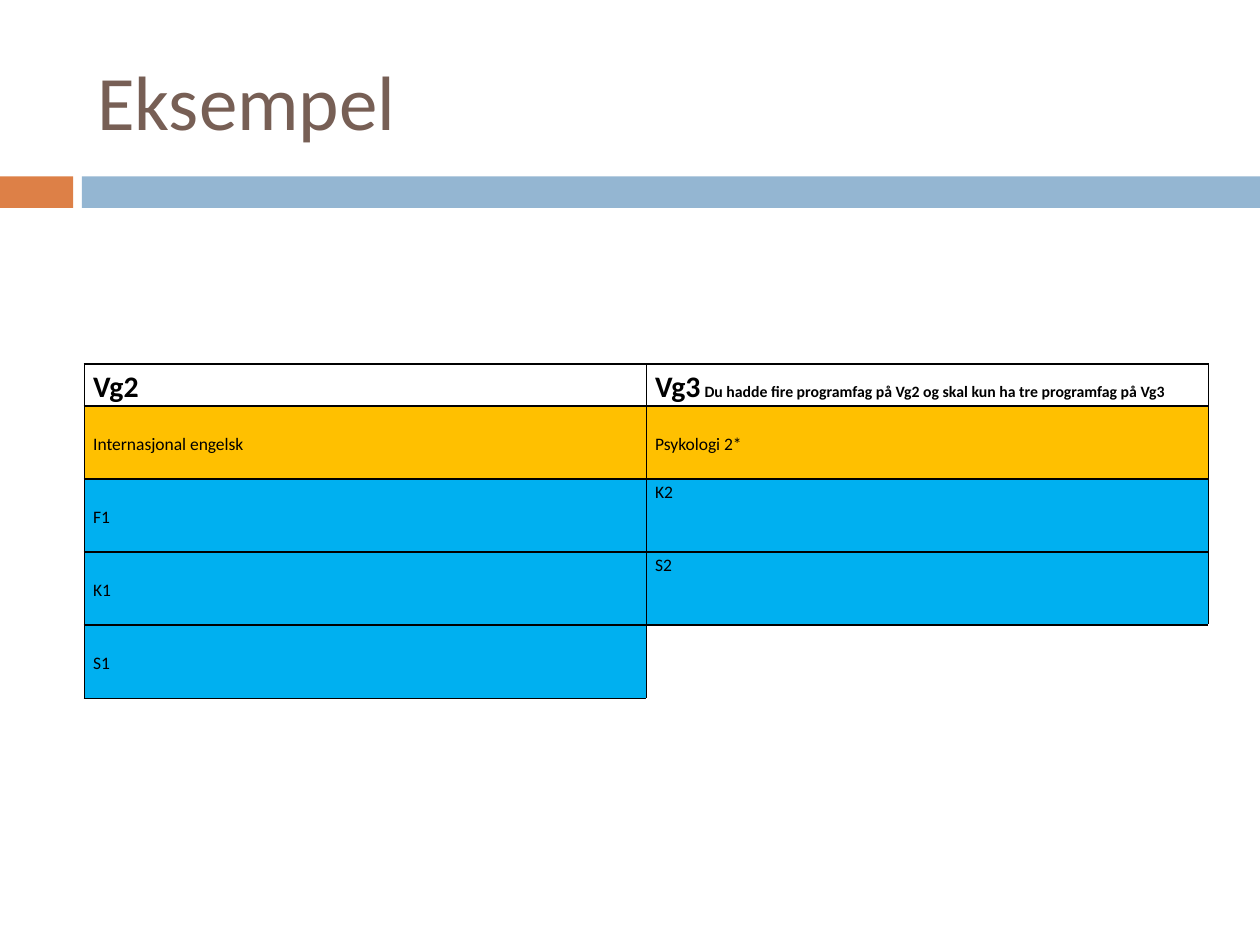
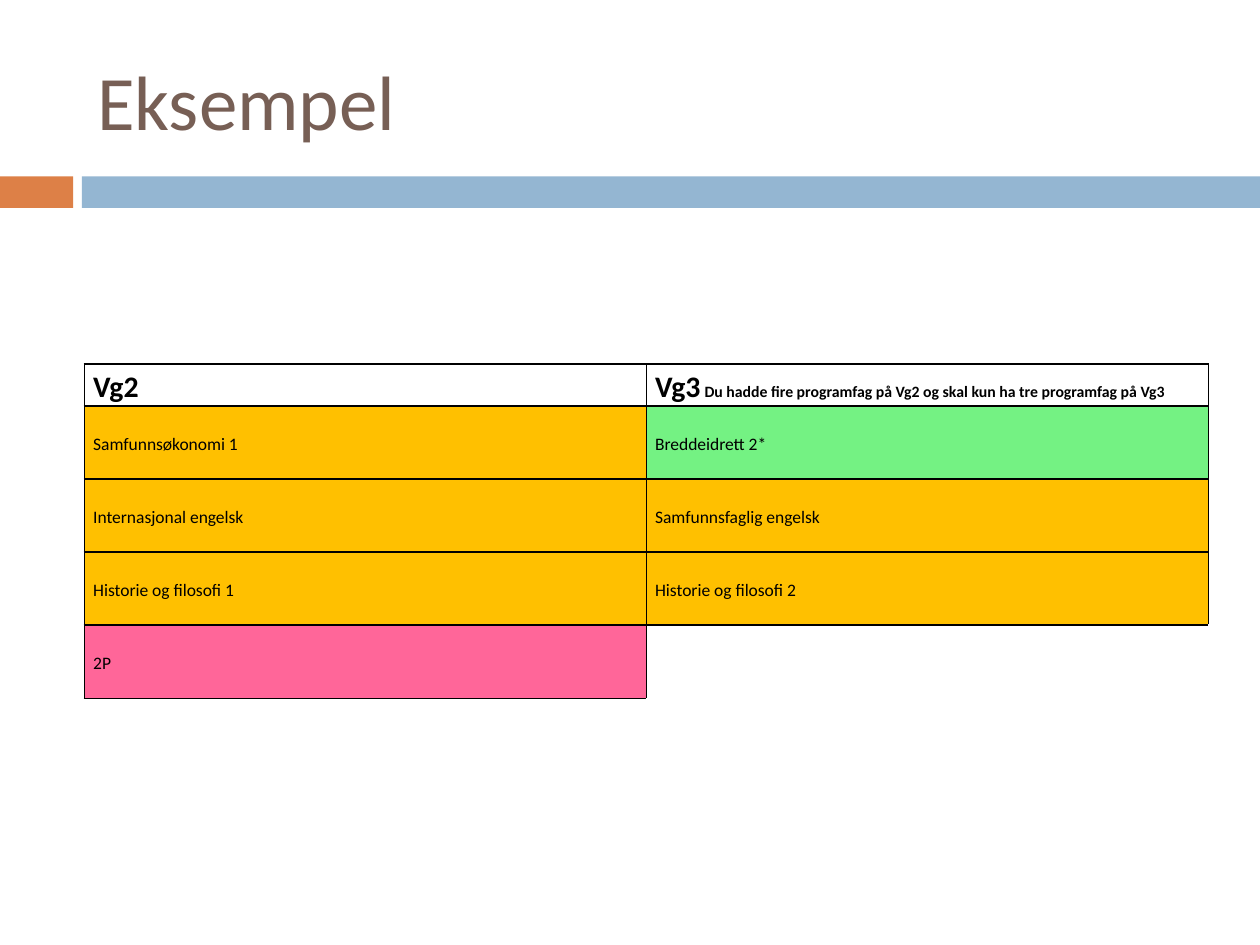
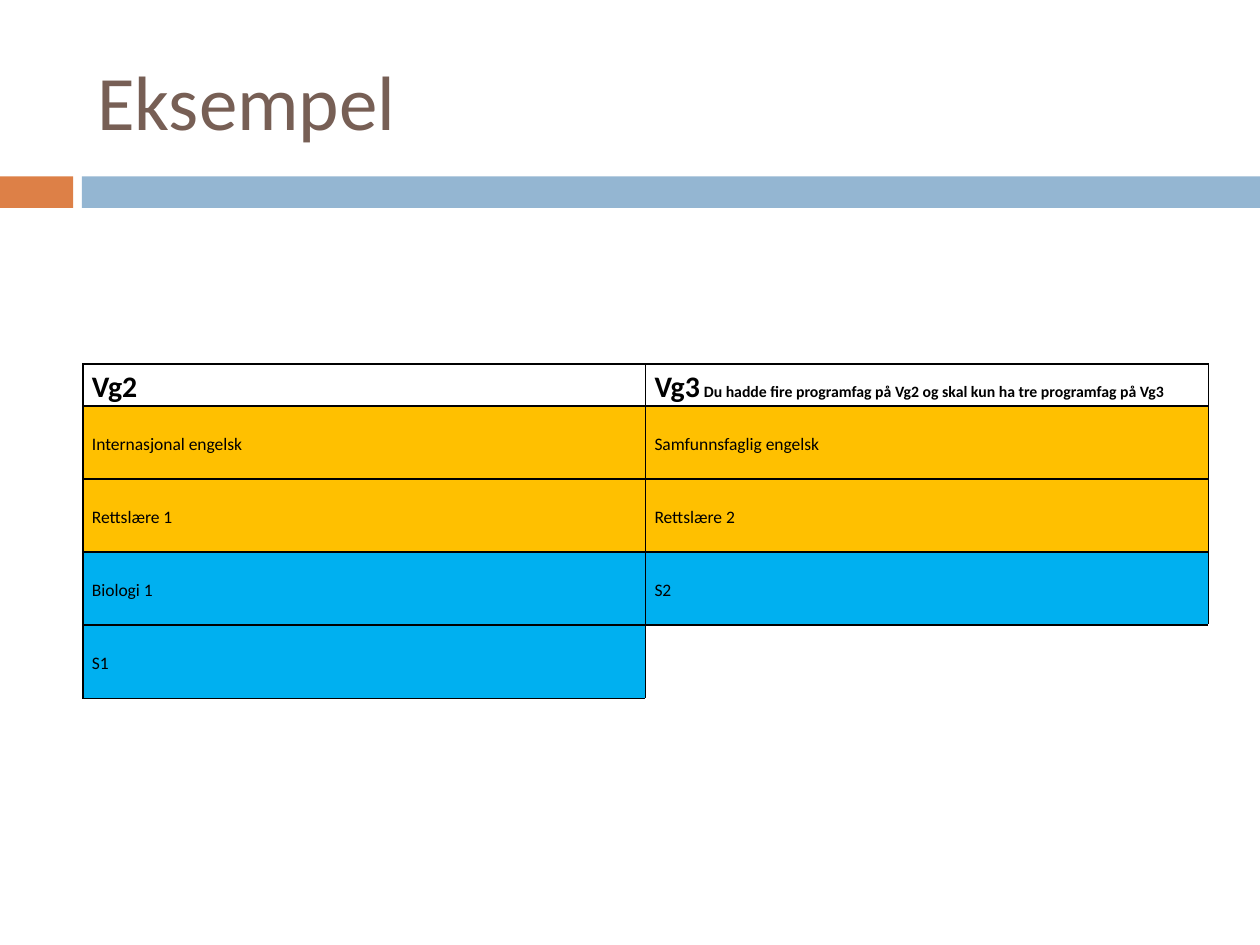
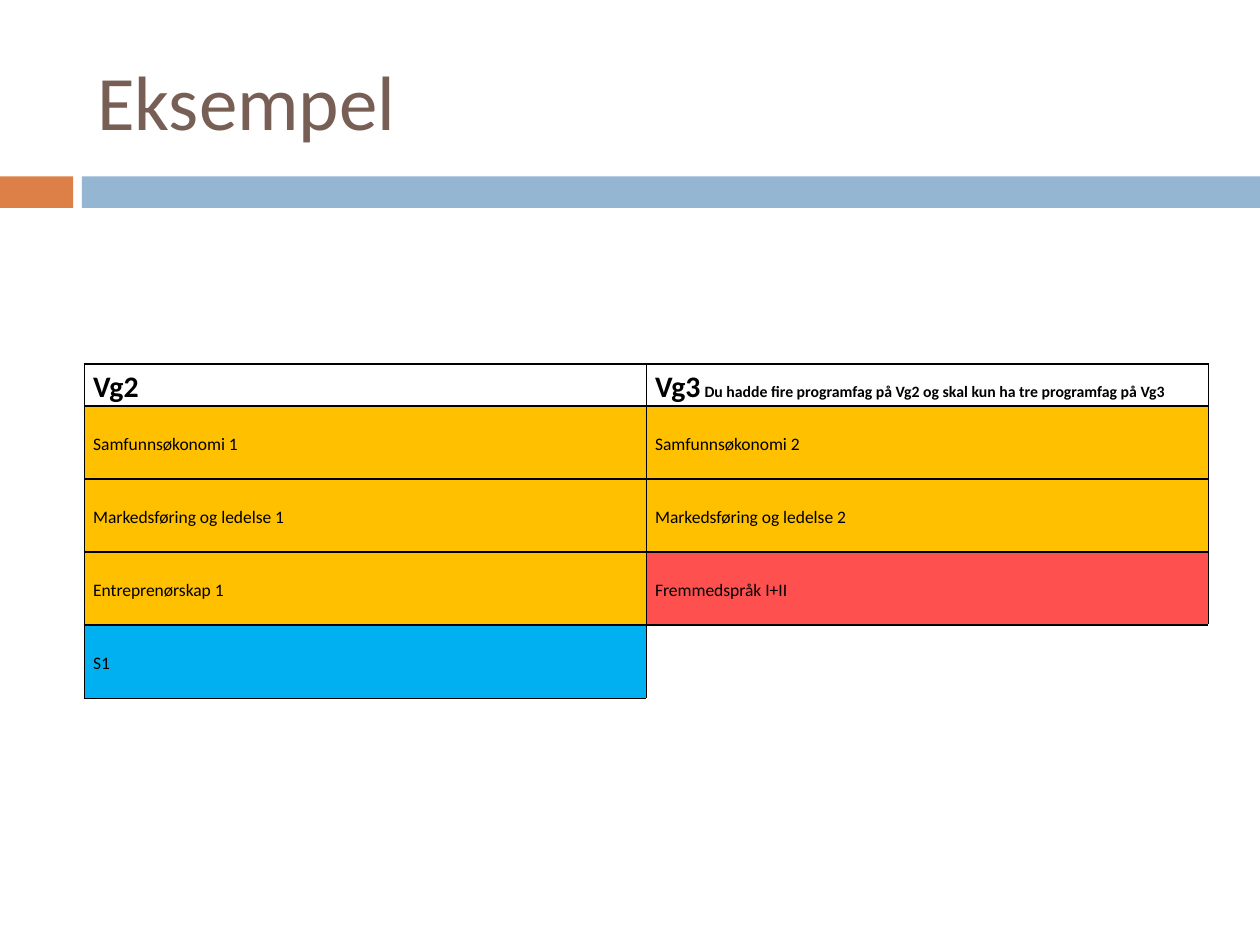
"""Build four example slides pairing Vg2 subjects with Vg3 subjects."""
from lxml.etree import SubElement
from pptx import Presentation
from pptx.dml.color import RGBColor
from pptx.enum.shapes import MSO_SHAPE
from pptx.enum.text import MSO_ANCHOR, PP_ALIGN
from pptx.oxml import parse_xml
from pptx.oxml.ns import nsdecls, qn
from pptx.util import Inches, Pt

COLORS = {
    "title": "775F55", "accent": "DD8047", "band": "94B6D2", "ink": "000000",
    "social": "FFC000", "science": "00B0F0", "sport": "74F283",
    "maths": "FF6699", "language": "FF5050",
}
FONT = "Calibri"
TITLE = "Eksempel"
HEADINGS = [
    [("Vg2", 17, True)],
    [("Vg3", 17, True), (" ", 10, False),
     ("Du hadde fire programfag på Vg2 og skal kun ha tre programfag på Vg3", 9, True)],
]
EXAMPLES = [
    {"left": 0.67, "top_aligned": ("K2", "S2"), "subjects": [
        [("Internasjonal engelsk", "social"), ("Psykologi 2*", "social")],
        [("F1", "science"), ("K2", "science")],
        [("K1", "science"), ("S2", "science")],
        [("S1", "science")],
    ]},
    {"left": 0.67, "top_aligned": (), "subjects": [
        [("Samfunnsøkonomi 1", "social"), ("Breddeidrett 2*", "sport")],
        [("Internasjonal engelsk", "social"), ("Samfunnsfaglig engelsk", "social")],
        [("Historie og filosofi 1", "social"), ("Historie og filosofi 2", "social")],
        [("2P", "maths")],
    ]},
    {"left": 0.66, "top_aligned": (), "subjects": [
        [("Internasjonal engelsk", "social"), ("Samfunnsfaglig engelsk", "social")],
        [("Rettslære 1", "social"), ("Rettslære 2", "social")],
        [("Biologi 1", "science"), ("S2", "science")],
        [("S1", "science")],
    ]},
    {"left": 0.67, "top_aligned": (), "subjects": [
        [("Samfunnsøkonomi 1", "social"), ("Samfunnsøkonomi 2", "social")],
        [("Markedsføring og ledelse 1", "social"), ("Markedsføring og ledelse 2", "social")],
        [("Entreprenørskap 1", "social"), ("Fremmedspråk I+II", "language")],
        [("S1", "science")],
    ]},
]

SLIDE_WIDTH, SLIDE_HEIGHT = 10, 7.5
BANDS = [(0, 0.58, "accent"), (0.65, 9.35, "band")]
BAND_TOP, BAND_HEIGHT = 1.4, 0.25
TABLE_TOP, TABLE_RIGHT = 2.89, 9.59
HEADING_HEIGHT, SUBJECT_HEIGHT = 0.32, 0.58


def rgb(name):
    return RGBColor.from_string(COLORS[name])


def style_run(run, size, color, bold=False):
    run.font.name = FONT
    run.font.size = Pt(size)
    run.font.bold = bold
    run.font.color.rgb = rgb(color)


def add_title(slide):
    title = slide.shapes.title
    title.left, title.top = Inches(0.67), Inches(0.25)
    title.width, title.height = Inches(8.92), Inches(1.08)
    title.text_frame.text = TITLE
    title.text_frame.vertical_anchor = MSO_ANCHOR.MIDDLE
    paragraph = title.text_frame.paragraphs[0]
    paragraph.alignment = PP_ALIGN.LEFT
    style_run(paragraph.runs[0], 44, "title")


def add_bands(slide):
    for left, width, color in BANDS:
        band = slide.shapes.add_shape(
            MSO_SHAPE.RECTANGLE, Inches(left), Inches(BAND_TOP),
            Inches(width), Inches(BAND_HEIGHT))
        band.shadow.inherit = False
        band.fill.solid()
        band.fill.fore_color.rgb = rgb(color)
        band.line.fill.background()


def set_borders(cell, sides):
    properties = cell._tc.get_or_add_tcPr()
    for position, side in enumerate(sides):
        border = parse_xml(f'<a:ln{side} {nsdecls("a")} w="12700"/>')
        fill = SubElement(border, qn("a:solidFill"))
        SubElement(fill, qn("a:srgbClr"), val=COLORS["ink"])
        properties.insert(position, border)


def fill_cell(cell, parts, color=None, anchor=MSO_ANCHOR.MIDDLE):
    cell.margin_left = cell.margin_right = Inches(0.07)
    cell.margin_top = cell.margin_bottom = 0
    cell.vertical_anchor = anchor
    if color:
        cell.fill.solid()
        cell.fill.fore_color.rgb = rgb(color)
    else:
        cell.fill.background()
    paragraph = cell.text_frame.paragraphs[0]
    paragraph.line_spacing = 1.15
    for text, size, bold in parts:
        run = paragraph.add_run()
        run.text = text
        style_run(run, size, "ink", bold)
    set_borders(cell, "LRTB" if parts else "LT")


def add_subjects(slide, example):
    subjects = example["subjects"]
    width = TABLE_RIGHT - example["left"]
    height = HEADING_HEIGHT + SUBJECT_HEIGHT * len(subjects)
    plan = slide.shapes.add_table(
        len(subjects) + 1, len(HEADINGS), Inches(example["left"]),
        Inches(TABLE_TOP), Inches(width), Inches(height)).table
    plan.first_row = plan.horz_banding = False
    for column in plan.columns:
        column.width = Inches(width / len(HEADINGS))
    for index, row in enumerate(plan.rows):
        row.height = Inches(SUBJECT_HEIGHT if index else HEADING_HEIGHT)
    for column, parts in enumerate(HEADINGS):
        fill_cell(plan.cell(0, column), parts, anchor=MSO_ANCHOR.TOP)
    for row, pair in enumerate(subjects, 1):
        for column, (subject, color) in enumerate(pair):
            on_top = subject in example["top_aligned"]
            fill_cell(plan.cell(row, column), [(subject, 10, False)], color,
                      MSO_ANCHOR.TOP if on_top else MSO_ANCHOR.MIDDLE)
        for column in range(len(pair), len(HEADINGS)):
            fill_cell(plan.cell(row, column), [])


def main():
    deck = Presentation()
    deck.slide_width, deck.slide_height = Inches(SLIDE_WIDTH), Inches(SLIDE_HEIGHT)
    title_only = deck.slide_layouts.get_by_name("Title Only")
    for example in EXAMPLES:
        slide = deck.slides.add_slide(title_only)
        add_bands(slide)
        add_title(slide)
        add_subjects(slide, example)
    deck.save("out.pptx")


if __name__ == "__main__":
    main()
